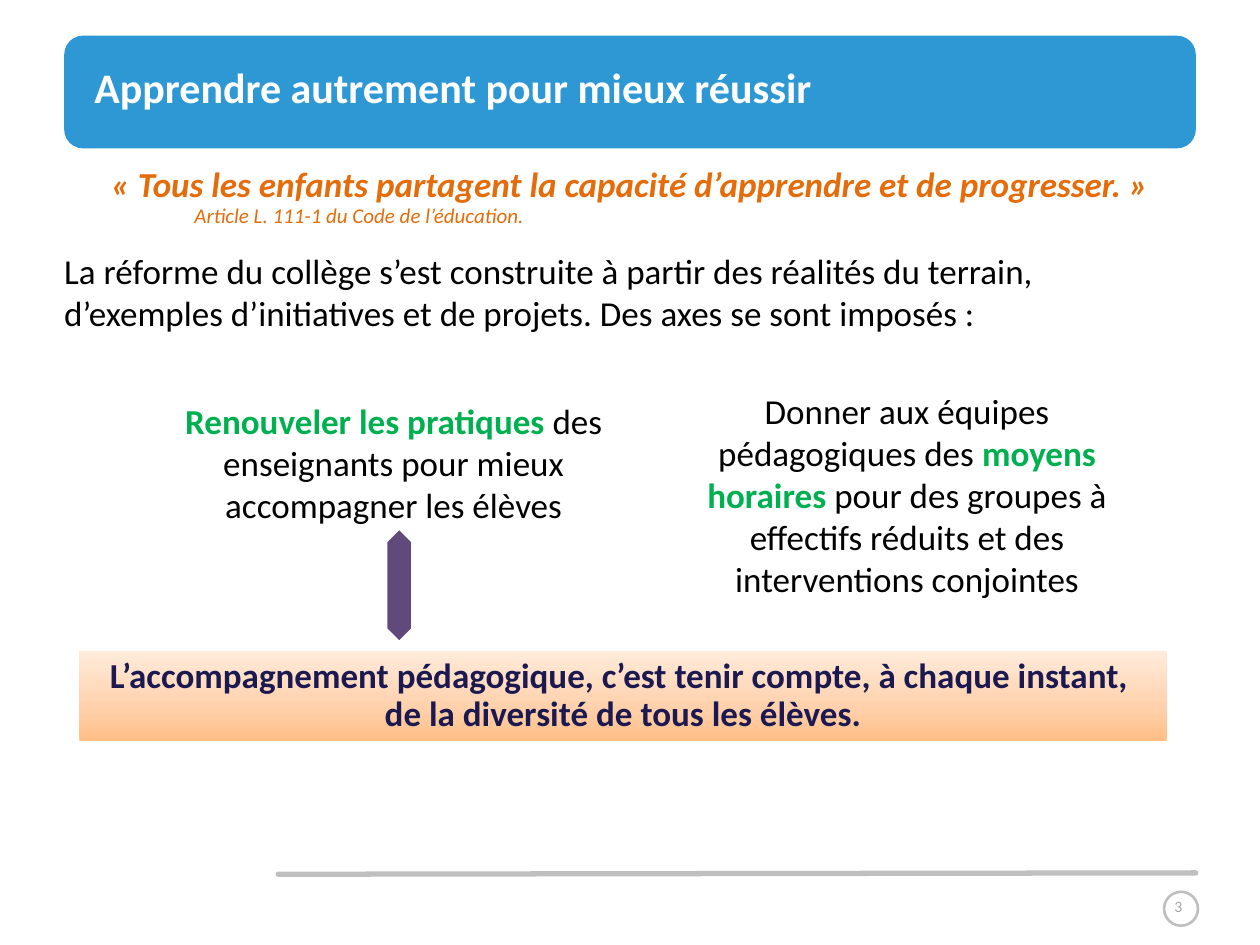
from copy import deepcopy
from dataclasses import dataclass
from pptx import Presentation
from pptx.dml.color import RGBColor
from pptx.enum.shapes import MSO_CONNECTOR, MSO_SHAPE
from pptx.enum.text import MSO_ANCHOR, PP_ALIGN
from pptx.oxml.ns import qn
from pptx.oxml.xmlchemy import OxmlElement
from pptx.util import Pt


@dataclass(frozen=True)
class Theme:
    font: str = "Calibri"
    blue: str = "2E98D5"
    white: str = "FFFFFF"
    black: str = "000000"
    orange: str = "E46C0A"
    green: str = "00B050"
    navy: str = "1C1850"
    violet: str = "604A7B"
    gray: str = "BFBFBF"
    dim: str = "A6A6A6"
    peach: tuple = ((0, "FFBE86"), (0.35, "FFD0AA"), (1, "FFEBDB"))
    head: int = 24
    body: int = 20
    note: int = 12
    tiny: int = 9


THEME = Theme()


def write(para, text, size=THEME.body, color=THEME.black, bold=False, italic=False):
    """Add text to a paragraph; a newline becomes a line break."""
    for i, part in enumerate(text.split("\n")):
        if i:
            para.add_line_break()
        run = para.add_run()
        run.text = part
        font = run.font
        font.name, font.size = THEME.font, Pt(size)
        font.bold, font.italic = bold, italic
        font.color.rgb = RGBColor.from_string(color)


class Page:
    def __init__(self, deck, theme):
        self.theme = theme
        self.slide = deck.slides.add_slide(deck.slide_layouts[6])

    def shape(self, kind, box, fill=None, line=None, width=0.75):
        item = self.slide.shapes.add_shape(kind, *map(Pt, box))
        item.shadow.inherit = False
        if fill:
            item.fill.solid()
            item.fill.fore_color.rgb = RGBColor.from_string(fill)
        else:
            item.fill.background()
        if line:
            item.line.color.rgb = RGBColor.from_string(line)
            item.line.width = Pt(width)
        else:
            item.line.fill.background()
        return item

    def fade(self, item, stops):
        """Fill a shape with a gradient that runs from bottom to top."""
        item.fill.gradient()
        item.fill.gradient_angle = 90
        marks = item.element.spPr.find(".//" + qn("a:gsLst"))
        while len(marks) < len(stops):
            marks.append(deepcopy(marks[0]))
        for stop, (place, color) in zip(item.fill.gradient_stops, stops):
            stop.position = place
            stop.color.rgb = RGBColor.from_string(color)

    def text(self, box, anchor=MSO_ANCHOR.TOP, inset=True):
        frame = self.slide.shapes.add_textbox(*map(Pt, box)).text_frame
        frame.word_wrap = True
        frame.vertical_anchor = anchor
        if not inset:
            frame.margin_left = frame.margin_right = 0
            frame.margin_top = frame.margin_bottom = 0
        return frame

    def para(self, frame, *parts, align=PP_ALIGN.CENTER, lead=None, after=0, indent=0):
        """Add a paragraph made of (text, format) parts."""
        first = frame.paragraphs[0]
        para = frame.add_paragraph() if first.runs else first
        para.alignment, para.space_after = align, Pt(after)
        if lead:
            para.line_spacing = lead
        if indent:
            para._p.get_or_add_pPr().set("marL", str(Pt(indent)))
        for text, look in parts:
            write(para, text, **look)

    def rule(self, start, end, color, width):
        line = self.slide.shapes.add_connector(
            MSO_CONNECTOR.STRAIGHT, *map(Pt, start + end))
        line.line.color.rgb = RGBColor.from_string(color)
        line.line.width = Pt(width)
        line.line._get_or_add_ln().set("cap", "rnd")
        line.element.spPr.append(OxmlElement("a:effectLst"))


def main():
    deck = Presentation()
    deck.slide_width, deck.slide_height = Pt(720), Pt(540)
    t = THEME
    page = Page(deck, t)
    left, mid = PP_ALIGN.LEFT, MSO_ANCHOR.MIDDLE
    key = dict(color=t.green, bold=True)

    page.shape(MSO_SHAPE.ROUNDED_RECTANGLE, (36.7, 20.4, 646.6, 64.4), t.blue)
    page.rule((159, 499.6), (683.3, 498.8), t.gray, 3)
    page.shape(MSO_SHAPE.OVAL, (665.2, 509.6, 19.4, 19.4), line=t.gray, width=1.5)
    number = page.text((647.5, 508.4, 51.8, 19.4), mid)
    page.para(number, ("3", dict(size=t.tiny, color=t.dim)))

    title = page.text((54, 13, 629.3, 73.4), mid, inset=False)
    page.para(title, ("Apprendre autrement pour mieux réussir",
                      dict(size=t.head, color=t.white, bold=True)), align=left)

    intro = page.text((36.7, 95.8, 646.6, 93.6), inset=False)
    page.para(intro, ("« Tous les enfants partagent la capacité d’apprendre et de progresser. »",
                      dict(color=t.orange, bold=True, italic=True)), lead=0.9)
    page.para(intro, ("Article L. 111-1 du Code de l’éducation.",
                      dict(size=t.note, color=t.orange, italic=True)),
              align=left, lead=0.9, after=12, indent=74.4)
    page.para(intro, ("La réforme du collège s’est construite à partir des réalités du terrain, "
                      "d’exemples d’initiatives et de projets. Des axes se sont imposés :", {}),
              align=left, after=6)

    means = page.text((393.8, 218.9, 249.1, 128.2))
    page.para(means, ("Donner aux équipes pédagogiques des ", {}), ("moyens horaires", key),
              (" pour des groupes à effectifs réduits et des interventions conjointes", {}))
    renew = page.text((85.7, 224.6, 278.6, 79.9))
    page.para(renew, ("Renouveler les pratiques", key),
              (" des enseignants pour mieux accompagner les élèves", {}))

    band = page.shape(MSO_SHAPE.RECTANGLE, (45.4, 372.2, 621.2, 51))
    page.fade(band, t.peach)
    band.text_frame.word_wrap = True
    band.text_frame.vertical_anchor = mid
    page.para(band.text_frame,
              ("L’accompagnement pédagogique, c’est tenir compte, à chaque instant, \n"
               "de la diversité de tous les élèves.", dict(color=t.navy, bold=True)), lead=0.9)

    arrow = page.shape(MSO_SHAPE.UP_DOWN_ARROW, (221, 302.4, 14.4, 64.1), t.violet, t.white)
    arrow.adjustments[0], arrow.adjustments[1] = 0.2, 1.05

    deck.save("out.pptx")


if __name__ == "__main__":
    main()
